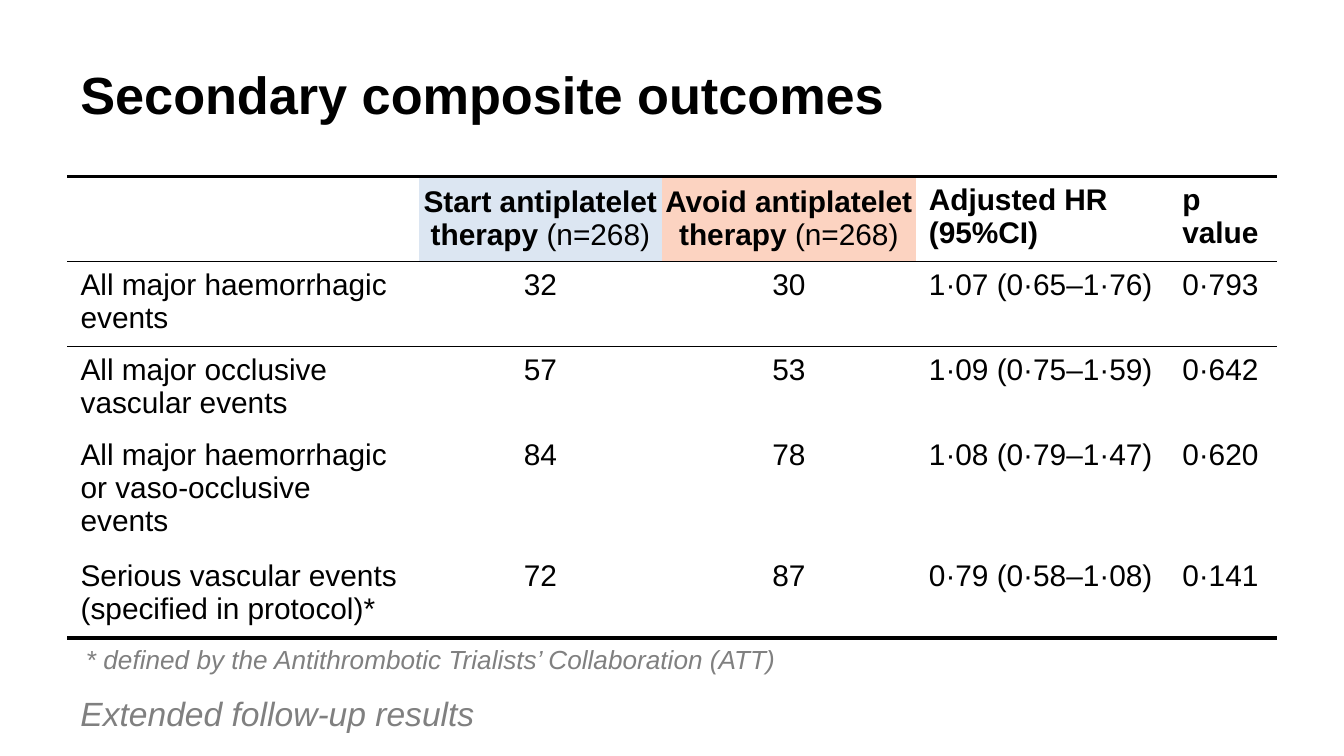
"""Build the slide that tabulates the secondary composite outcomes."""
import lxml.etree
import pptx
import pptx.dml.color
import pptx.enum.text
import pptx.oxml.ns
import pptx.util

PX = 9525
BLACK = pptx.dml.color.RGBColor(0x00, 0x00, 0x00)
GREY = pptx.dml.color.RGBColor(0x80, 0x80, 0x80)
BLUE = pptx.dml.color.RGBColor(0xDC, 0xE6, 0xF2)
PEACH = pptx.dml.color.RGBColor(0xFC, 0xD3, 0xC1)
CENTER = pptx.enum.text.PP_ALIGN.CENTER
MIDDLE = pptx.enum.text.MSO_ANCHOR.MIDDLE


def style(span, size, color, bold=False, italic=False):
    span.font.name = "Arial"
    span.font.size = pptx.util.Pt(size)
    span.font.color.rgb = color
    span.font.bold = bold
    span.font.italic = italic


def add_border(cell, side, width):
    tag = pptx.oxml.ns.qn
    properties = cell._tc.get_or_add_tcPr()
    line = lxml.etree.SubElement(properties, tag(f"a:ln{side}"), w=str(pptx.util.Pt(width)))
    if width:
        fill = lxml.etree.SubElement(line, tag("a:solidFill"))
        lxml.etree.SubElement(fill, tag("a:srgbClr"), val=str(BLACK))
    else:
        lxml.etree.SubElement(line, tag("a:noFill"))


deck = pptx.Presentation()
deck.slide_width = 960 * PX
deck.slide_height = 540 * PX
page = deck.slides.add_slide(deck.slide_layouts[6])

texts = [
    ("Secondary composite outcomes", (48, 22, 754, 90), 28, BLACK, True, False),
    ("Extended follow-up results", (48, 490, 866, 45), 18, GREY, False, True),
    ("* defined by the Antithrombotic Trialists’ Collaboration (ATT)",
     (52, 455, 847, 33), 14, GREY, False, True),
]
for text, place, size, color, bold, italic in texts:
    box = page.shapes.add_textbox(*(length * PX for length in place))
    frame = box.text_frame
    frame.word_wrap = True
    frame.text = text
    if bold:
        frame.vertical_anchor = MIDDLE
    style(frame.paragraphs[0].runs[0], size, color, bold, italic)

rows = [
    ("", "Start antiplatelet therapy ", "Avoid antiplatelet therapy ",
     "Adjusted HR (95%CI)", "p value"),
    ("All major haemorrhagic events", "32", "30", "1·07 (0·65–1·76)", "0·793"),
    ("All major occlusive vascular events", "57", "53", "1·09 (0·75–1·59)", "0·642"),
    ("All major haemorrhagic or vaso-occlusive events", "84", "78",
     "1·08 (0·79–1·47)", "0·620"),
    ("Serious vascular events (specified in protocol)*", "72", "87",
     "0·79 (0·58–1·08)", "0·141"),
]
widths = [251, 174, 181, 181, 77]
heights = [57, 57, 57, 81, 57]
rules = [2.25, 1, 1, 0, 0, 2.25]
arm_fills = {1: BLUE, 2: PEACH}

table = page.shapes.add_table(
    len(rows), len(widths), 48 * PX, 126 * PX, sum(widths) * PX, sum(heights) * PX
).table
table.first_row = False
table.horz_banding = False
for column, width in zip(table.columns, widths):
    column.width = width * PX

for row_index, values in enumerate(rows):
    table.rows[row_index].height = heights[row_index] * PX
    for column_index, value in enumerate(values):
        cell = table.cell(row_index, column_index)
        is_arm = column_index in arm_fills
        cell.text = value
        para = cell.text_frame.paragraphs[0]
        if is_arm:
            para.alignment = CENTER
        for span in para.runs:
            style(span, 16, BLACK, bold=row_index == 0)
        add_border(cell, "L", 0)
        add_border(cell, "R", 0)
        add_border(cell, "T", rules[row_index])
        add_border(cell, "B", rules[row_index + 1])
        if is_arm and row_index == 0:
            count = para.add_run()
            count.text = "(n=268)"
            style(count, 16, BLACK)
            cell.vertical_anchor = MIDDLE
            cell.margin_left = cell.margin_right = PX if column_index == 1 else 0
            cell.margin_top = cell.margin_bottom = 0
            cell.fill.solid()
            cell.fill.fore_color.rgb = arm_fills[column_index]
        else:
            cell.fill.background()

deck.save("out.pptx")
